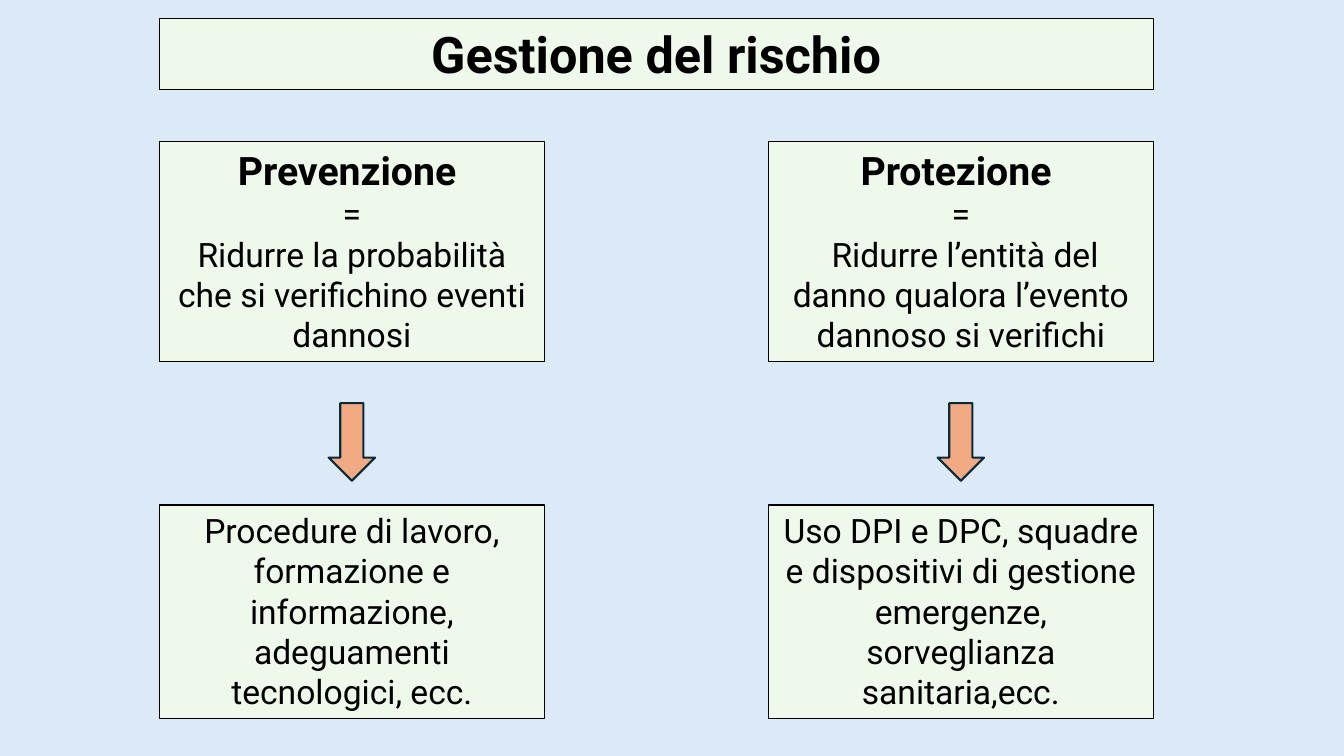
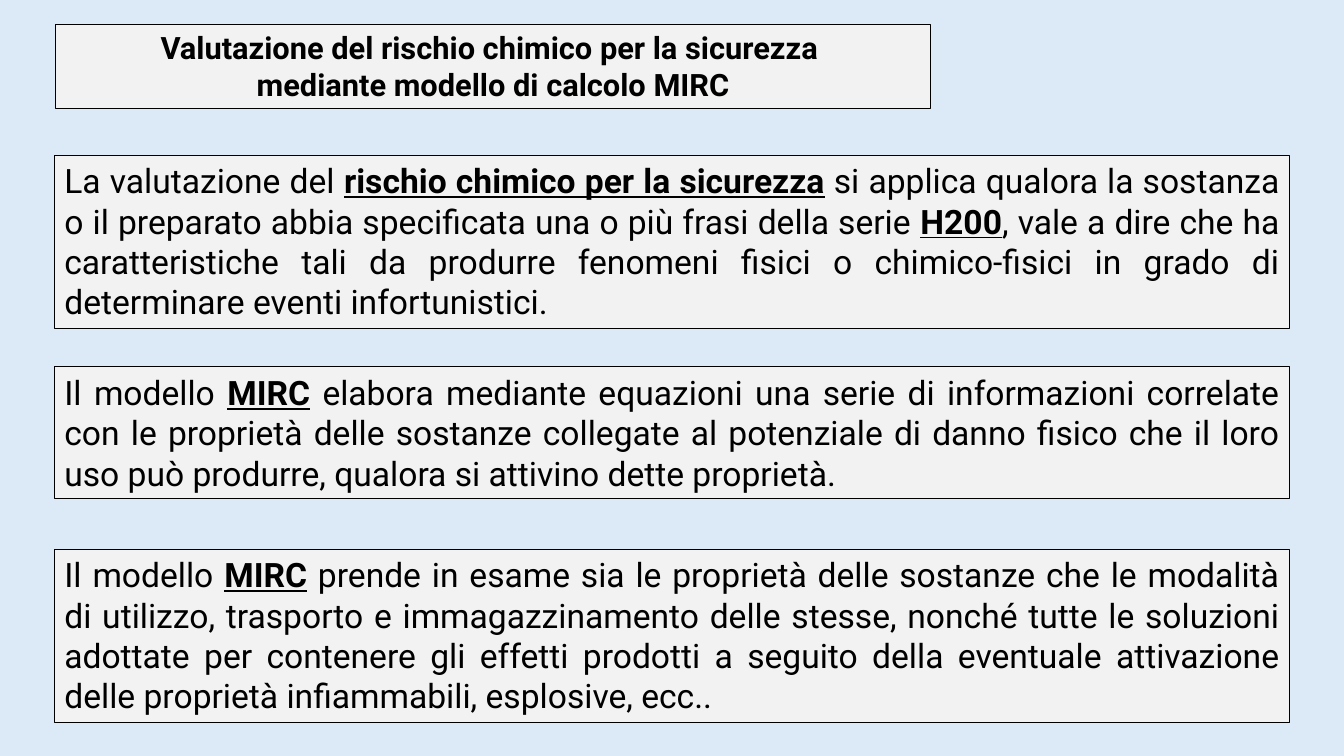
from pptx import Presentation
from pptx.dml.color import RGBColor
from pptx.enum import shapes, text
from pptx.util import Inches, Pt

SKY, MINT, GREY = "DCEAF7", "EFF9EB", "F2F2F2"
BLACK, PEACH, NAVY = "000000", "F2AA84", "092A39"
MID, JUST = text.PP_ALIGN.CENTER, text.PP_ALIGN.JUSTIFY


def paint(shape, fill, line, width):
    shape.fill.solid()
    shape.fill.fore_color.rgb = RGBColor.from_string(fill)
    shape.line.color.rgb = RGBColor.from_string(line)
    shape.line.width = Pt(width)


def panel(slide, at, fill, align, lines):
    """Add a framed text panel; lines are (text, size, bold), *marks* stress words."""
    box = slide.shapes.add_textbox(*map(Inches, at))
    paint(box, fill, BLACK, 0.75)
    frame = box.text_frame
    frame.word_wrap = True
    frame.auto_size = text.MSO_AUTO_SIZE.SHAPE_TO_FIT_TEXT
    for i, (words, size, bold) in enumerate(lines):
        para = frame.add_paragraph() if i else frame.paragraphs[0]
        para.alignment = align
        font = para.font
        font.name, font.size, font.bold = "Roboto", Pt(size), bold
        font.color.rgb = RGBColor.from_string(BLACK)
        for j, part in enumerate(words.split("*")):
            run = para.add_run()
            run.text = part
            if j % 2:
                run.font.bold = run.font.underline = True


deck = Presentation()
deck.slide_width, deck.slide_height = Inches(13.33), Inches(7.5)
pages = []
for _ in range(2):
    page = deck.slides.add_slide(deck.slide_layouts[6])
    page.background.fill.solid()
    page.background.fill.fore_color.rgb = RGBColor.from_string(SKY)
    pages.append(page)
risk, model = pages

# Slide 1: title above two columns, each with an arrow from aim to means
panel(risk, (1.58, 0.18, 9.86, 0.71), MINT, MID, [("Gestione del rischio", 36, True)])
wide, thin = 3.82, 0.46
columns = [
    (1.58, "Prevenzione ", "Ridurre la probabilità che si verifichino eventi dannosi",
     "Procedure di lavoro, formazione e informazione, adeguamenti tecnologici, ecc."),
    (7.62, "Protezione ", " Ridurre l’entità del danno qualora l’evento dannoso si verifichi",
     "Uso DPI e DPC, squadre e dispositivi di gestione emergenze, sorveglianza sanitaria,ecc."),
]
for left, name, aim, means in columns:
    panel(risk, (left, 1.4, wide, 2.19), MINT, MID,
          [(name, 28, True), ("=", 24, False), (aim, 24, False)])
    arrow = risk.shapes.add_shape(
        shapes.MSO_SHAPE.DOWN_ARROW, Inches(left + (wide - thin) / 2), Inches(4),
        Inches(thin), Inches(0.77))
    arrow.shadow.inherit = False
    paint(arrow, PEACH, NAVY, 1.5)
    panel(risk, (left, 5.01, wide, 2.12), MINT, MID, [(means, 24, False)])

# Slide 2: title and three justified statements
panel(model, (0.55, 0.24, 8.68, 0.84), GREY, MID,
      [("Valutazione del rischio chimico per la sicurezza ", 22, True),
       ("mediante modello di calcolo MIRC", 22, True)])
notes = [
    (1.54, 1.72, "La valutazione del *rischio chimico per la sicurezza* si applica qualora "
     "la sostanza o il preparato abbia specificata una o più frasi della serie *H200*, "
     "vale a dire che ha caratteristiche tali da produrre fenomeni fisici o "
     "chimico-fisici in grado di determinare eventi infortunistici."),
    (3.64, 1.31, "Il modello *MIRC* elabora mediante equazioni una serie di informazioni "
     "correlate con le proprietà delle sostanze collegate al potenziale di danno fisico "
     "che il loro uso può produrre, qualora si attivino dette proprietà."),
    (5.45, 1.72, "Il modello *MIRC* prende in esame sia le proprietà delle sostanze che le "
     "modalità di utilizzo, trasporto e immagazzinamento delle stesse, nonché tutte le "
     "soluzioni adottate per contenere gli effetti prodotti a seguito della eventuale "
     "attivazione delle proprietà infiammabili, esplosive, ecc.."),
]
for top, high, words in notes:
    panel(model, (0.54, top, 12.25, high), GREY, JUST, [(words, 24, False)])

deck.save("out.pptx")
